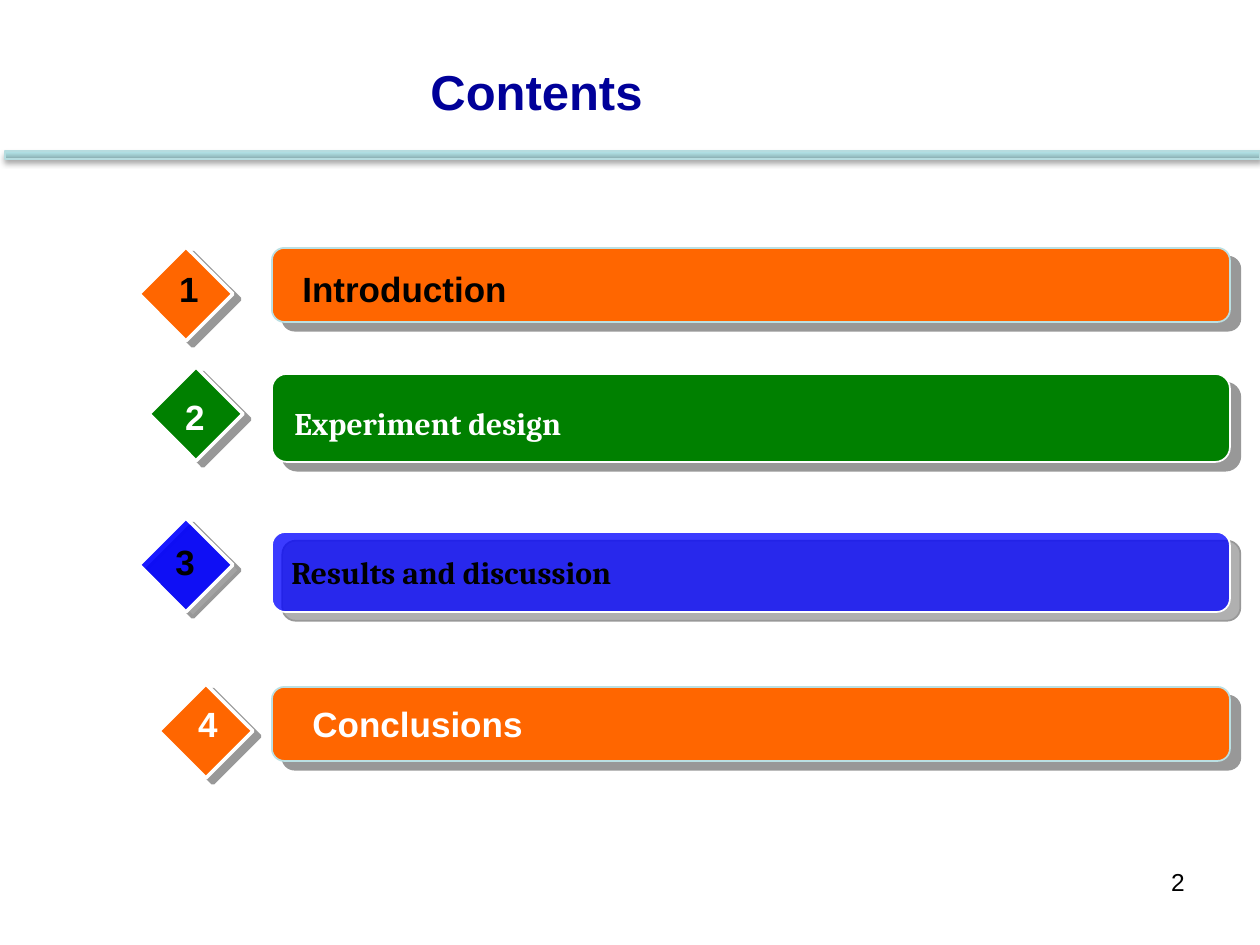
from lxml.etree import SubElement
from pptx import Presentation
from pptx.dml.color import RGBColor
from pptx.enum.shapes import MSO_SHAPE
from pptx.enum.text import MSO_AUTO_SIZE, PP_ALIGN
from pptx.oxml.ns import qn
from pptx.util import Pt

PX = 914400 / 126
COLORS = {
    "orange": "FF6600", "green": "008000", "blue": "0000FF", "navy": "000099",
    "black": "000000", "white": "FFFFFF", "pale": "BBE0E3", "shadow": "333333",
    "rule_dark": "87ABAE", "rule_light": "AFDEE2", "rule_line": "B6DCDF",
}

presentation = Presentation()
presentation.slide_width = round(1260 * PX)
presentation.slide_height = round(945 * PX)
slide = presentation.slides.add_slide(presentation.slide_layouts[6])


def add_shape(kind, box, line, width, shadow, fill=None, opacity=100):
    """Add an outlined shape; shadow is (color, opacity, blur, distance, angle)."""
    shape = slide.shapes.add_shape(kind, *[round(n * PX) for n in box])
    if fill:
        shape.fill.solid()
        shape.fill.fore_color.rgb = RGBColor.from_string(COLORS[fill])
        if opacity < 100:
            color = shape.fill._xPr.find(".//" + qn("a:srgbClr"))
            SubElement(color, qn("a:alpha"), val=str(opacity * 1000))
    shape.line.color.rgb = RGBColor.from_string(COLORS[line])
    shape.line.width = Pt(width)
    shape.shadow.inherit = False
    shadow_color, shadow_opacity, blur, distance, angle = shadow
    effects = shape._element.spPr.find(qn("a:effectLst"))
    outer = SubElement(effects, qn("a:outerShdw"), blurRad=str(Pt(blur)),
                       dist=str(Pt(distance)), dir=str(angle * 60000),
                       algn="ctr", rotWithShape="0")
    color = SubElement(outer, qn("a:srgbClr"), val=COLORS[shadow_color])
    SubElement(color, qn("a:alpha"), val=str(shadow_opacity * 1000))
    return shape


def add_text(text, box, size, color, font="Arial", bold=True, align=PP_ALIGN.LEFT):
    """Add a one-line text box and return its paragraph."""
    shape = slide.shapes.add_textbox(*[round(n * PX) for n in box])
    frame = shape.text_frame
    frame.word_wrap = True
    frame.auto_size = MSO_AUTO_SIZE.SHAPE_TO_FIT_TEXT
    paragraph = frame.paragraphs[0]
    paragraph.alignment = align
    run = paragraph.add_run()
    run.text = text
    run.font.name = font
    run.font.size = Pt(size)
    run.font.bold = bold
    run.font.color.rgb = RGBColor.from_string(COLORS[color])
    return paragraph


# Title and rule
add_text("Contents", (66, 55, 941, 72), 28, "navy", align=PP_ALIGN.CENTER)
rule = add_shape(MSO_SHAPE.RECTANGLE, (5, 151, 1255, 8), "rule_line", 0.75,
                 ("black", 35, 3.1, 1.8, 90))
rule.fill.gradient()
rule.fill.gradient_angle = 90
for stop, position, name in zip(rule.fill.gradient_stops, (0, 0.8),
                                ("rule_dark", "rule_light")):
    stop.position = position
    stop.color.rgb = RGBColor.from_string(COLORS[name])

# Rows: fill, bar line, bar top and height, bar opacity,
# diamond left and top, diamond opacity, number left and top, text color
rows = [
    ("orange", "pale", 248, 74, 100, 139, 247, 100, 165, 261, "black"),
    ("green", "white", 374, 88, 100, 149, 367, 100, 171, 389, "white"),
    ("blue", "white", 532, 80, 77, 139, 518, 90, 161, 534, "black"),
    ("orange", "pale", 687, 74, 100, 159, 684, 100, 184, 696, "white"),
]
for number, row in enumerate(rows, 1):
    (fill, line, bar_top, bar_height, bar_opacity, diamond_left, diamond_top,
     diamond_opacity, number_left, number_top, color) = row
    add_shape(MSO_SHAPE.ROUNDED_RECTANGLE, (272, bar_top, 958, bar_height), line, 1,
              ("shadow", 50, 0, 7.8, 40), fill, bar_opacity)
    add_shape(MSO_SHAPE.DIAMOND, (diamond_left, diamond_top, 94, 94), "white", 2,
              ("shadow", 50, 0, 5, 37), fill, diamond_opacity)
    add_text(str(number), (number_left, number_top, 48, 55), 20, color,
             align=PP_ALIGN.CENTER)

# Topic names
add_text("Introduction", (290, 261, 568, 55), 20, "black")
experiment = add_text("Experiment design", (48, 401, 1125, 49), 18, "white", "Cambria")
experiment.line_spacing = 0.95
experiment._p.get_or_add_pPr().set("marL", str(round(234 * PX)))
add_text("Results and discussion", (279, 547, 531, 50), 18, "black", "Cambria")
add_text("Conclusions", (300, 696, 582, 55), 20, "white")

# Slide number
add_text("2", (903, 861, 294, 66), 14, "black", bold=False, align=PP_ALIGN.RIGHT)

presentation.save("out.pptx")
